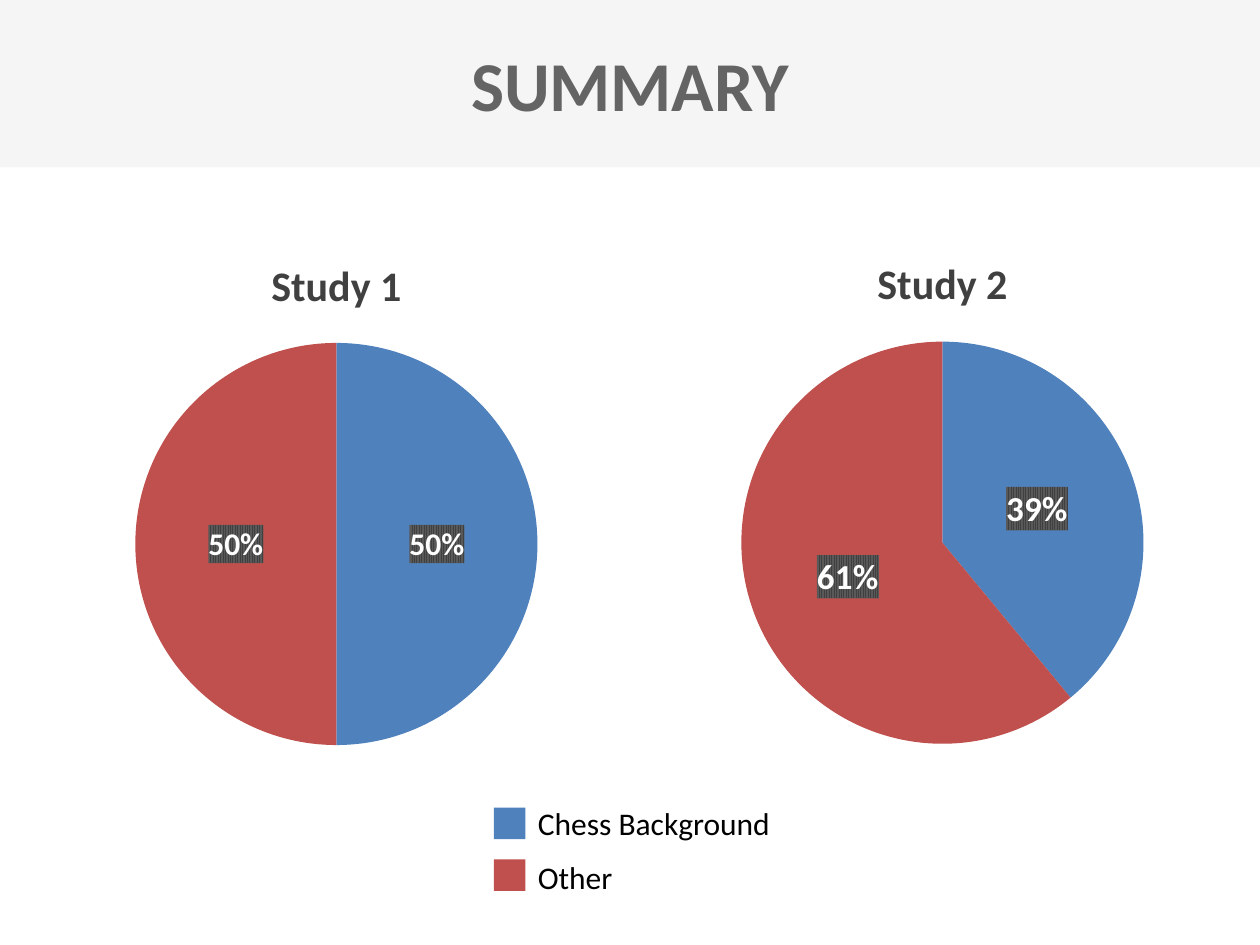
from lxml import etree
from pptx import Presentation
from pptx.chart.data import CategoryChartData
from pptx.dml.color import RGBColor
from pptx.enum.chart import XL_CHART_TYPE, XL_LABEL_POSITION
from pptx.enum.shapes import MSO_SHAPE
from pptx.enum.text import MSO_ANCHOR, PP_ALIGN
from pptx.oxml import parse_xml
from pptx.util import Inches, Pt

PIE = XL_CHART_TYPE.PIE
LABEL_CENTER = XL_LABEL_POSITION.CENTER
RECTANGLE = MSO_SHAPE.RECTANGLE
MIDDLE, TOP = MSO_ANCHOR.MIDDLE, MSO_ANCHOR.TOP
CENTER, LEFT = PP_ALIGN.CENTER, PP_ALIGN.LEFT

FONT = "Calibri"
COLORS = {
    "band": "F5F5F5",
    "heading": "646464",
    "chart title": "404040",
    "chess": "4F81BD",
    "other": "C0504D",
    "label": "FFFFFF",
    "label dark": "404040",
    "label light": "595959",
    "text": "000000",
}
CHART_NS = "http://schemas.openxmlformats.org/drawingml/2006/chart"
DRAWING_NS = "http://schemas.openxmlformats.org/drawingml/2006/main"
LABEL_FILL = (
    f'<c:spPr xmlns:c="{CHART_NS}" xmlns:a="{DRAWING_NS}"><a:pattFill prst="narVert">'
    f'<a:fgClr><a:srgbClr val="{COLORS["label dark"]}"/></a:fgClr>'
    f'<a:bgClr><a:srgbClr val="{COLORS["label light"]}"/></a:bgClr>'
    "</a:pattFill></c:spPr>"
)
PIE_AREA = {"layoutTarget": "inner", "xMode": "edge", "yMode": "edge",
            "x": 0.18, "y": 0.21, "w": 0.64, "h": 0.76}


class SlideBuilder:
    """Holds the style and the current slide and draws each kind of element."""

    def __init__(self, slide, font, colors):
        self.slide = slide
        self.font = font
        self.colors = colors

    def color(self, name):
        return RGBColor.from_string(self.colors[name])

    def style(self, font, size, color, bold=False):
        font.name = self.font
        font.size = Pt(size)
        font.bold = bold
        font.color.rgb = self.color(color)

    def rectangle(self, left, top, width, height, color):
        shape = self.slide.shapes.add_shape(
            RECTANGLE, Inches(left), Inches(top), Inches(width), Inches(height))
        shape.shadow.inherit = False
        shape.fill.solid()
        shape.fill.fore_color.rgb = self.color(color)
        shape.line.fill.background()

    def text(self, left, top, width, height, words, size, color,
             bold=False, align=LEFT, anchor=TOP):
        box = self.slide.shapes.add_textbox(
            Inches(left), Inches(top), Inches(width), Inches(height))
        frame = box.text_frame
        frame.word_wrap = True
        frame.vertical_anchor = anchor
        frame.text = words
        para = frame.paragraphs[0]
        para.alignment = align
        self.style(para.runs[0].font, size, color, bold)

    def pie(self, left, top, width, height, title, values, label_size):
        data = CategoryChartData()
        data.categories = ["1", "2"]
        data.add_series(title, values)
        chart = self.slide.shapes.add_chart(
            PIE, Inches(left), Inches(top), Inches(width), Inches(height), data).chart
        self.style(chart.font, 10, "text")
        chart.has_legend = False
        chart.has_title = True
        title_frame = chart.chart_title.text_frame
        title_frame.text = title
        self.style(title_frame.paragraphs[0].runs[0].font, 24, "chart title", True)
        chart.chart_title.include_in_layout = False

        plot = chart.plots[0]
        plot.vary_by_categories = True
        series = plot.series[0]
        for index, name in enumerate(("chess", "other")):
            fill = series.points[index].format.fill
            fill.solid()
            fill.fore_color.rgb = self.color(name)
        self.percent_labels(series.data_labels, label_size)
        self.place_pie(chart)

    def percent_labels(self, labels, size):
        labels.show_percentage = True
        labels.show_value = False
        labels.number_format = "0%"
        labels.number_format_is_linked = False
        labels.position = LABEL_CENTER
        self.style(labels.font, size, "label", True)
        text_properties = labels._element.find(f"{{{CHART_NS}}}txPr")
        text_properties.addprevious(parse_xml(LABEL_FILL))

    def place_pie(self, chart):
        area = chart._chartSpace.find(f".//{{{CHART_NS}}}plotArea")
        layout = area.find(f"{{{CHART_NS}}}layout")
        if layout is None:
            layout = etree.Element(f"{{{CHART_NS}}}layout")
            area.insert(0, layout)
        manual = etree.SubElement(layout, f"{{{CHART_NS}}}manualLayout")
        for name, value in PIE_AREA.items():
            etree.SubElement(manual, f"{{{CHART_NS}}}{name}").set("val", str(value))


def main():
    deck = Presentation()
    deck.slide_width, deck.slide_height = Inches(10), Inches(7.5)
    page = SlideBuilder(deck.slides.add_slide(deck.slide_layouts[6]), FONT, COLORS)

    page.pie(0.17, 1.84, 5, 4.2, "Study 1", (50, 50), 18)
    page.pie(4.98, 1.83, 5, 4.2, "Study 2", (39, 61), 20)

    page.rectangle(0, 0, 10, 1.33, "band")
    page.text(0, 0.44, 10, 0.45, "SUMMARY", 40, "heading", True, CENTER, MIDDLE)

    legend = (("Chess Background", "chess", 6.41, 6.33), ("Other", "other", 6.82, 6.76))
    for words, color, key_top, text_top in legend:
        page.rectangle(3.92, key_top, 0.25, 0.25, color)
        page.text(4.17, text_top, 2.42, 0.4, words, 18, "text")

    deck.save("out.pptx")


if __name__ == "__main__":
    main()
